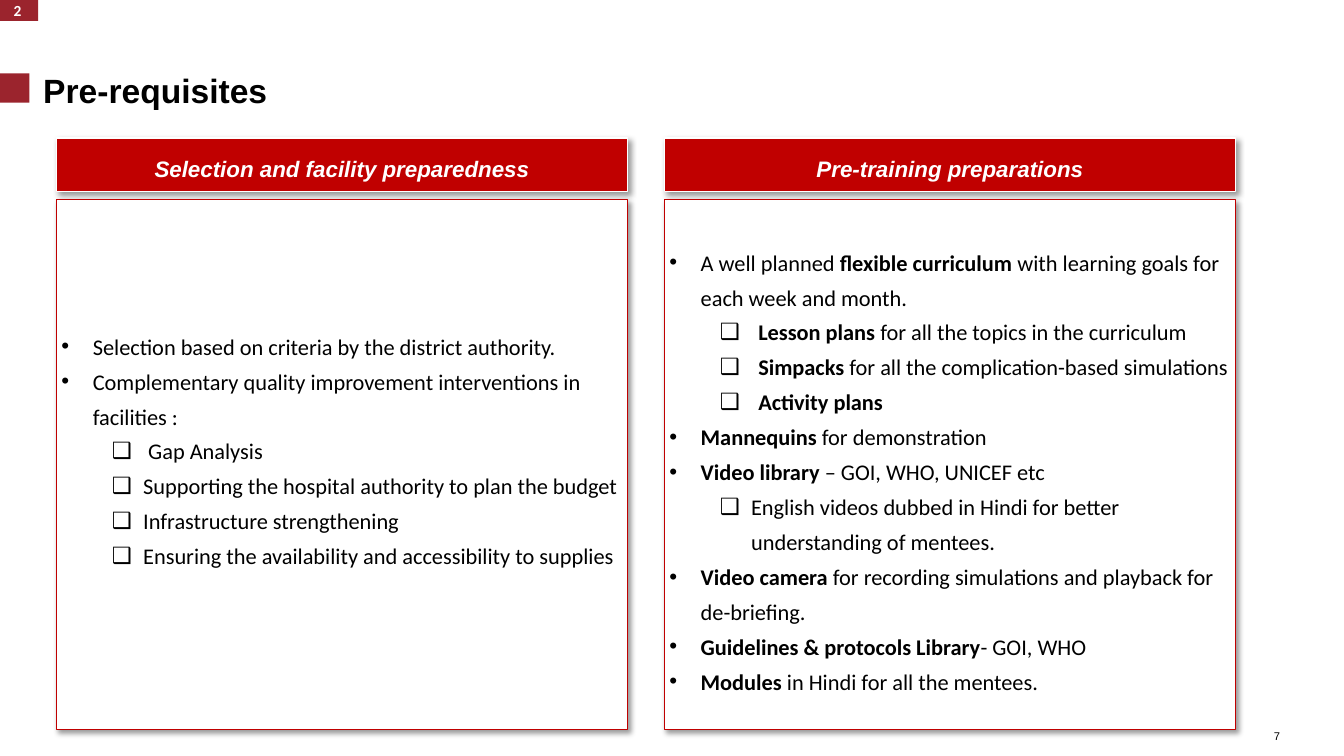
from lxml import etree
from pptx import Presentation
from pptx.dml.color import RGBColor
from pptx.enum.shapes import MSO_SHAPE
from pptx.enum.text import MSO_ANCHOR, PP_ALIGN
from pptx.oxml.ns import qn
from pptx.util import Cm, Pt

RECTANGLE = MSO_SHAPE.RECTANGLE
MIDDLE, BOTTOM = MSO_ANCHOR.MIDDLE, MSO_ANCHOR.BOTTOM
LEFT, CENTER, RIGHT = PP_ALIGN.LEFT, PP_ALIGN.CENTER, PP_ALIGN.RIGHT
COLORS = {"accent": "9B242D", "red": "C00000", "white": "FFFFFF", "black": "000000"}

# bullet style: level, character, text indent and hanging width in cm
BULLETS = {
    "dot": (0, "•", 0.79, 0.79),
    "box": (1, "❑", 2.06, 0.79),
    "wide box": (1, "❑", 2.24, 0.97),
}
PANEL_WIDTH = 14.4
INSET = 0.13

# heading, left, top inset, bottom inset, items; ** marks bold text
PANELS = [
    ("Selection and facility preparedness", 1.42, INSET, 1.02, [
        ("dot", "Selection based on criteria by the district authority."),
        ("dot", "Complementary quality improvement interventions in facilities :"),
        ("box", " Gap Analysis"),
        ("box", "Supporting the hospital authority to plan the budget"),
        ("box", "Infrastructure strengthening"),
        ("box", "Ensuring the availability and accessibility to supplies"),
    ]),
    ("Pre-training preparations", 16.74, 0.28, INSET, [
        ("dot", "A well planned **flexible curriculum **with learning goals for each week and month."),
        ("wide box", "**Lesson plans **for all the topics in the curriculum"),
        ("wide box", "**Simpacks **for all the complication-based simulations"),
        ("wide box", "**Activity plans**"),
        ("dot", "**Mannequins **for demonstration"),
        ("dot", "**Video library **– GOI, WHO, UNICEF etc"),
        ("box", "English videos dubbed in Hindi for better understanding of mentees."),
        ("dot", "**Video camera **for recording simulations and playback for de-briefing."),
        ("dot", "**Guidelines & protocols Library**- GOI, WHO"),
        ("dot", "**Modules** in Hindi for all the mentees."),
    ]),
]


def add_box(left, top, width, height, fill=None, line=None, inset=0, anchor=MIDDLE):
    """Add a rectangle; one with a line also gets a soft drop shadow."""
    position = Cm(left), Cm(top), Cm(width), Cm(height)
    if fill:
        shape = slide.shapes.add_shape(RECTANGLE, *position)
        shape.shadow.inherit = False
        shape.fill.solid()
        shape.fill.fore_color.rgb = RGBColor.from_string(COLORS[fill])
        shape.line.fill.background()
    else:
        shape = slide.shapes.add_textbox(*position)
    if line:
        shape.line.color.rgb = RGBColor.from_string(COLORS[line])
        shape.line.width = Pt(1)
        effects = shape.element.spPr.find(qn("a:effectLst"))
        shadow = etree.SubElement(effects, qn("a:outerShdw"), blurRad=str(Pt(4)),
                                  dist=str(Pt(3)), dir="2700000", algn="tl", rotWithShape="0")
        color = etree.SubElement(shadow, qn("a:srgbClr"), val=COLORS["black"])
        etree.SubElement(color, qn("a:alpha"), val="40000")
    frame = shape.text_frame
    frame.word_wrap = True
    frame.vertical_anchor = anchor
    frame.margin_left = frame.margin_right = Cm(inset)
    frame.margin_top = frame.margin_bottom = Cm(inset)
    return frame


def write(paragraph, text, size, font="Arial", color="black", align=LEFT, bold=None):
    """Fill a paragraph, setting the parts between ** marks in bold."""
    paragraph.alignment = align
    paragraph.font.size = Pt(size)
    paragraph.font.name = font
    paragraph.font.bold = bold
    paragraph.font.color.rgb = RGBColor.from_string(COLORS[color])
    for index, part in enumerate(text.split("**")):
        if part:
            run = paragraph.add_run()
            run.text = part
            if index % 2:
                run.font.bold = True


presentation = Presentation()
presentation.slide_width, presentation.slide_height = Cm(33.87), Cm(19.05)
slide = presentation.slides.add_slide(presentation.slide_layouts[6])

add_box(0, 1.85, 0.74, 0.74, fill="accent")
title = add_box(1.09, 1.78, 32.77, 0.97)
write(title.paragraphs[0], "Pre-requisites", 24, bold=True)
section_tag = add_box(-0.08, -0.03, 1.04, 0.56, fill="accent", inset=INSET)
write(section_tag.paragraphs[0], "2", 11, "Calibri", "white", CENTER, bold=True)
page_number = add_box(31.55, 18.14, 0.71, 0.58, anchor=BOTTOM)
write(page_number.paragraphs[0], "7", 8, align=RIGHT)

for heading, left, top_inset, bottom_inset, items in PANELS:
    header = add_box(left, 3.48, PANEL_WIDTH, 1.35, "red", "white", INSET)
    paragraph = header.paragraphs[0]
    paragraph.line_spacing = 1.3
    write(paragraph, heading, 16, color="white", align=CENTER, bold=True)
    paragraph.font.italic = True

    body = add_box(left, 5.03, PANEL_WIDTH, 13.36, "white", "red", INSET)
    body.margin_top, body.margin_bottom = Cm(top_inset), Cm(bottom_inset)
    for index, (style, text) in enumerate(items):
        paragraph = body.add_paragraph() if index else body.paragraphs[0]
        level, character, indent, hanging = BULLETS[style]
        paragraph.level = level
        properties = paragraph._p.get_or_add_pPr()
        properties.set("marL", str(Cm(indent)))
        properties.set("indent", str(-Cm(hanging)))
        etree.SubElement(properties, qn("a:buFont"), typeface="Arial")
        etree.SubElement(properties, qn("a:buChar"), char=character)
        paragraph.line_spacing = 1.3
        write(paragraph, text, 16, "Calibri")

presentation.save("out.pptx")
